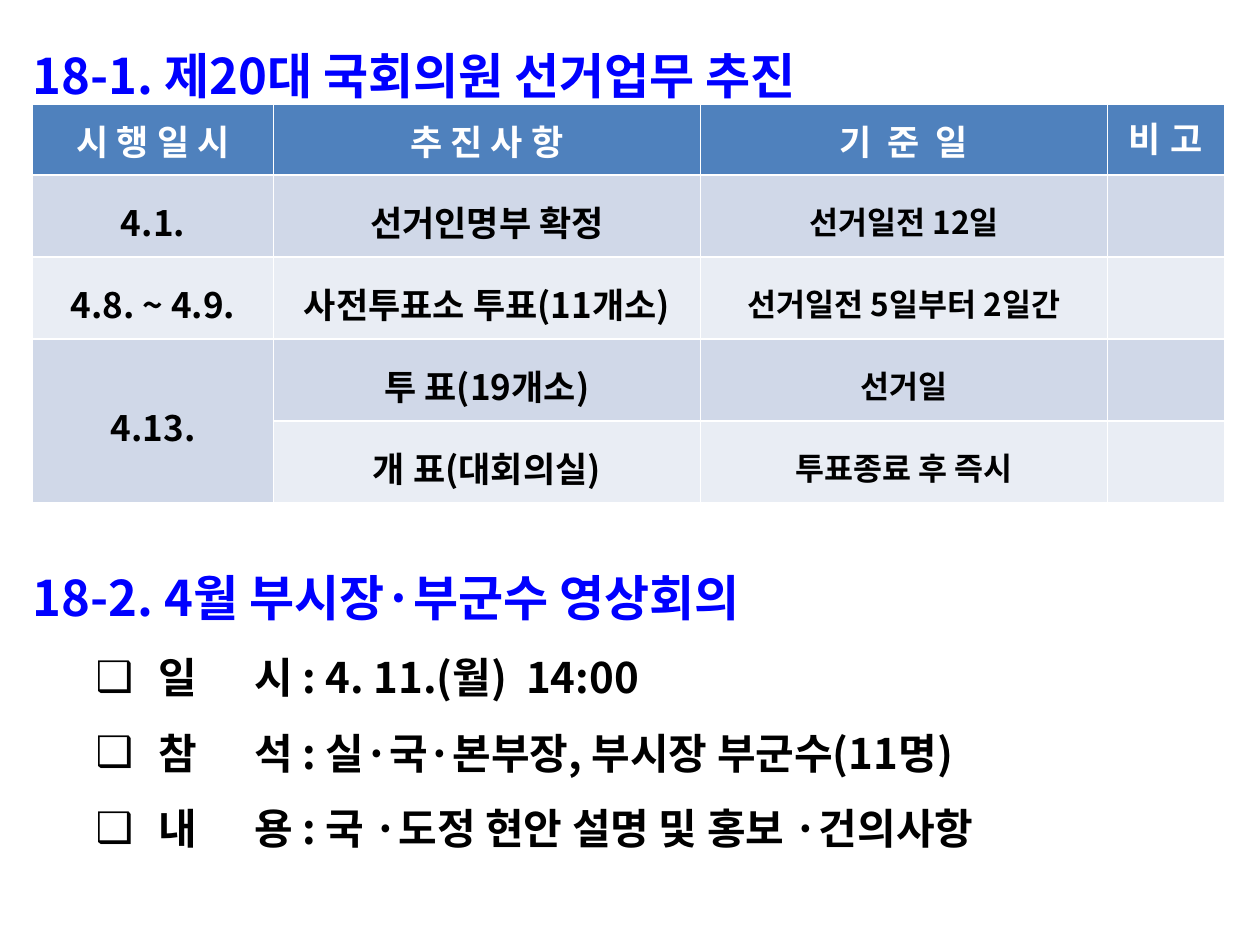
from lxml import etree
from pptx import Presentation
from pptx.dml.color import RGBColor
from pptx.enum import text
from pptx.oxml import ns
from pptx.util import Inches, Pt

FONT = "Noto Sans CJK KR"
BLUE, BLACK, WHITE = "0000FF", "000000", "FFFFFF"
HEADER_FILL, BANDS = "4F81BD", ("D0D8E8", "E9EDF4")

ELECTION_TITLE = "18-1. 제20대 국회의원 선거업무 추진"
HEADERS = ["시 행 일 시", "추 진 사 항", "기  준  일", "비 고"]
SCHEDULE = [
    ["4.1.", "선거인명부 확정", "선거일전 12일", ""],
    ["4.8. ~ 4.9.", "사전투표소 투표(11개소)", "선거일전 5일부터 2일간", ""],
    ["4.13.", "투 표(19개소)", "선거일", ""],
    ["", "개 표(대회의실)", "투표종료 후 즉시", ""],
]
COL_WIDTHS = [1.91, 3.39, 3.23, 0.93]
HEADER_HEIGHT, ROW_HEIGHT = 0.56, 0.65

MEETING_TITLE = "18-2. 4월 부시장·부군수 영상회의"
MEETING = [
    ("일", "시 : 4. 11.(월)  14:00"),
    ("참", "석 : 실·국·본부장, 부시장 부군수(11명)"),
    ("내", "용 : 국 ·도정 현안 설명 및 홍보 ·건의사항"),
]


def rgb(value):
    return RGBColor.from_string(value)


def add_xml(parent, tag, **attrs):
    return etree.SubElement(parent, ns.qn(tag), attrs)


def format_paragraph(p, size, color, spacing, align, name=FONT):
    p.alignment = align
    p.line_spacing = spacing
    p.space_before = Pt(0)
    font = p.font
    font.size, font.bold, font.name = Pt(size), True, name
    font.color.rgb = rgb(color)
    add_xml(font._element, "a:ea", typeface=name)


def place(sp, left, top, width, height):
    sp.left, sp.top = Inches(left), Inches(top)
    sp.width, sp.height = Inches(width), Inches(height)
    tf = sp.text_frame
    tf.word_wrap = True
    tf.auto_size = text.MSO_AUTO_SIZE.NONE
    tf.vertical_anchor = text.MSO_ANCHOR.TOP
    return tf


def set_bullet(p, left, indent, char=None):
    pPr = p._p.get_or_add_pPr()
    pPr.set("marL", str(Inches(left)))
    pPr.set("indent", str(Inches(indent)))
    if char:
        add_xml(add_xml(pPr, "a:buClr"), "a:srgbClr", val=BLACK)
        add_xml(pPr, "a:buChar", char=char)
    else:
        add_xml(pPr, "a:buNone")


def fill_cell(cell, value, fill, size, color, spacing, name=FONT):
    cell.fill.solid()
    cell.fill.fore_color.rgb = rgb(fill)
    cell.vertical_anchor = text.MSO_ANCHOR.MIDDLE
    if value:
        cell.text = value
        format_paragraph(cell.text_frame.paragraphs[0], size, color, spacing,
                         text.PP_ALIGN.CENTER, name)


def add_schedule(s):
    rows, cols = len(SCHEDULE) + 1, len(HEADERS)
    height = HEADER_HEIGHT + ROW_HEIGHT * len(SCHEDULE)
    table = s.shapes.add_table(rows, cols, Inches(0.26), Inches(0.83),
                               Inches(sum(COL_WIDTHS)), Inches(height)).table
    for column, width in zip(table.columns, COL_WIDTHS):
        column.width = Inches(width)
    for i, row in enumerate(table.rows):
        row.height = Inches(ROW_HEIGHT if i else HEADER_HEIGHT)
    for c, value in enumerate(HEADERS):
        name = "Arial" if c == cols - 1 else FONT
        fill_cell(table.cell(0, c), value, HEADER_FILL, 20, WHITE, 1.0, name)
    for r, values in enumerate(SCHEDULE):
        for c, value in enumerate(values):
            fill_cell(table.cell(r + 1, c), value, BANDS[r % 2],
                      18 if c == 2 else 20, BLACK, 1.2)
    table.cell(rows - 2, 0).merge(table.cell(rows - 1, 0))


def add_meeting(tf):
    left = text.PP_ALIGN.LEFT
    heading = tf.paragraphs[0]
    heading.text = MEETING_TITLE
    set_bullet(heading, 0, 0)
    format_paragraph(heading, 28, BLUE, 1.5, left)
    for first, rest in MEETING:
        p = tf.add_paragraph()
        p.level = 1
        p.add_run().text = first
        gap = p.add_run()
        gap.text = " "
        gap.font._element.set("spc", "2700")
        p.add_run().text = rest
        set_bullet(p, 1, -0.5, "❑")
        format_paragraph(p, 24, BLACK, 1.5, left)


def main():
    prs = Presentation()
    prs.slide_width, prs.slide_height = Inches(10), Inches(7.5)
    s = prs.slides.add_slide(prs.slide_layouts[1])
    title, body = s.placeholders
    p = place(title, 0.16, 0.08, 9.38, 3.25).paragraphs[0]
    p.text = ELECTION_TITLE
    format_paragraph(p, 28, BLUE, 1.5, text.PP_ALIGN.LEFT)
    add_schedule(s)
    add_meeting(place(body, 0.16, 4.22, 9.14, 2.68))
    prs.save("out.pptx")


if __name__ == "__main__":
    main()
